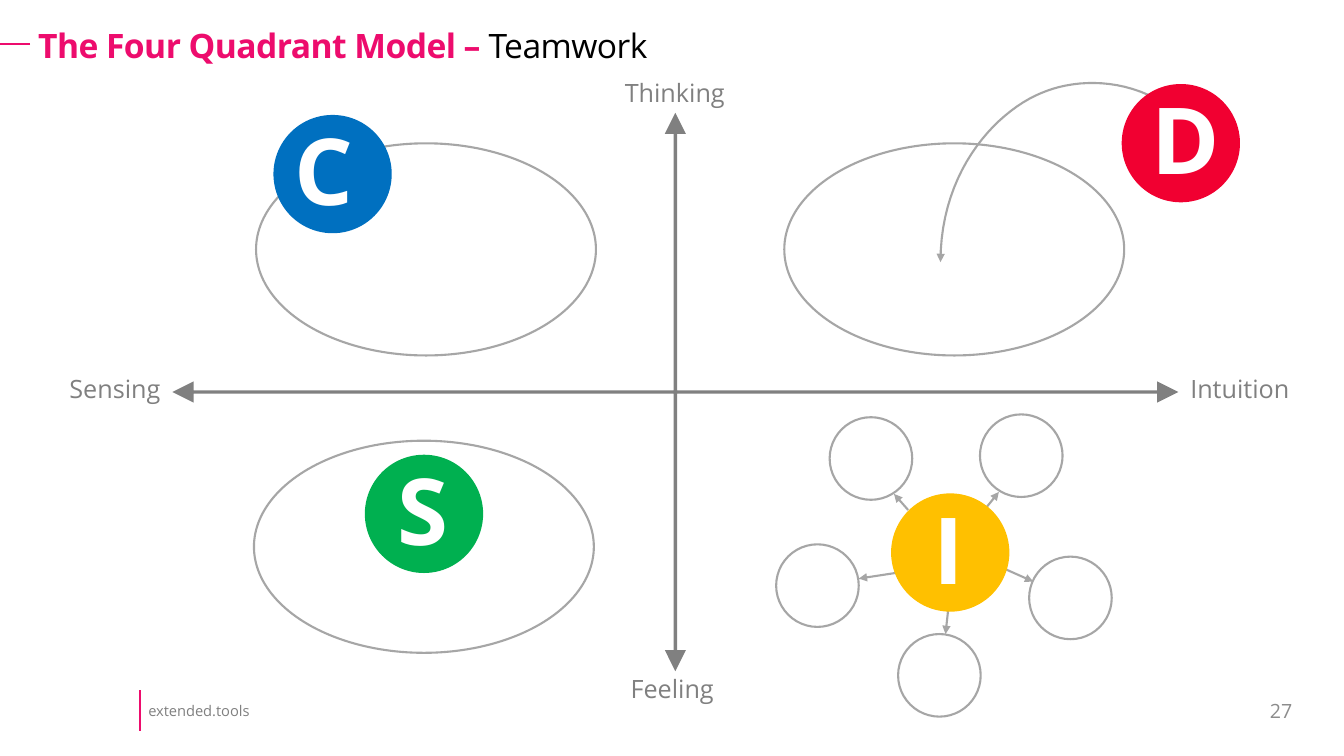
from dataclasses import dataclass
from lxml.etree import SubElement
from pptx import Presentation
from pptx.dml.color import RGBColor
from pptx.enum.shapes import MSO_CONNECTOR, MSO_SHAPE
from pptx.enum.text import MSO_ANCHOR, MSO_AUTO_SIZE, PP_ALIGN
from pptx.oxml.ns import qn
from pptx.util import Pt


@dataclass(frozen=True)
class Theme:
    font: str = "Open Sans"
    accent: str = "ED0C6D"
    black: str = "000000"
    white: str = "FFFFFF"
    axis: str = "808080"
    outline: str = "A6A6A6"
    number: str = "8C8C8C"
    red: str = "F10031"
    green: str = "00B050"
    yellow: str = "FFC000"
    blue: str = "0070C0"
    title_size: float = 24
    label_size: float = 18
    letter_size: float = 66
    number_size: float = 14
    footer_size: float = 10.5
    line_width: float = 1.5


class SlideBuilder:
    def __init__(self, s, theme):
        self.s, self.t = s, theme

    def set_attrs(self, obj, values):
        for name, value in values.items():
            setattr(obj, name, value)

    def run(self, p, text, size, color, bold=False):
        r = p.add_run()
        r.text = text
        self.set_attrs(r.font, {"name": self.t.font, "size": Pt(size), "bold": bold})
        r.font.color.rgb = RGBColor.from_string(color)
        return r

    def frame(self, tf, inset_x, inset_y, anchor, wrap):
        self.set_attrs(tf, {
            "margin_left": Pt(inset_x), "margin_right": Pt(inset_x),
            "margin_top": Pt(inset_y), "margin_bottom": Pt(inset_y),
            "vertical_anchor": anchor, "word_wrap": wrap,
            "auto_size": MSO_AUTO_SIZE.NONE})

    def title(self, box, strong, plain):
        sp = self.s.shapes.title
        self.set_attrs(sp, dict(zip(("left", "top", "width", "height"), map(Pt, box))))
        self.frame(sp.text_frame, 5.7, 2.9, MSO_ANCHOR.MIDDLE, True)
        p = sp.text_frame.paragraphs[0]
        self.set_attrs(p, {"alignment": PP_ALIGN.LEFT, "line_spacing": 0.9})
        for text, color, bold in ((strong, self.t.accent, True), (plain, self.t.black, False)):
            r = self.run(p, text, self.t.title_size, color, bold)
            r.font._element.set("spc", "-40")

    def text(self, box, text, size, color, align=PP_ALIGN.LEFT, inset=(7.2, 3.6),
             anchor=MSO_ANCHOR.TOP, wrap=True, bold=False):
        tf = self.s.shapes.add_textbox(*map(Pt, box)).text_frame
        self.frame(tf, *inset, anchor, wrap)
        p = tf.paragraphs[0]
        p.alignment = align
        self.run(p, text, size, color, bold)

    def stroke(self, sp, color, arrow=None):
        sp.line.color.rgb = RGBColor.from_string(color)
        sp.line.width = Pt(self.t.line_width)
        if arrow:
            SubElement(sp.line._get_or_add_ln(), qn(f"a:{arrow}"), type="triangle")

    def line(self, start, end, color, arrow=None):
        sp = self.s.shapes.add_connector(MSO_CONNECTOR.STRAIGHT, *map(Pt, (*start, *end)))
        self.stroke(sp, color, arrow)
        SubElement(sp._element.spPr, qn("a:effectLst"))

    def shape(self, kind, box, fill=None, adjustments=()):
        sp = self.s.shapes.add_shape(kind, *map(Pt, box))
        sp.shadow.inherit = False
        for i, value in enumerate(adjustments):
            sp.adjustments[i] = value
        if fill:
            sp.fill.solid()
            sp.fill.fore_color.rgb = RGBColor.from_string(fill)
            sp.line.fill.background()
        else:
            sp.fill.background()
            self.stroke(sp, self.t.outline)

    def curve(self, points, steps=24):
        """Draw joined cubic curves; each takes three points after the first."""
        dots = []
        for i in range(0, len(points) - 1, 3):
            for k in range(1, steps + 1):
                u = k / steps
                weights = ((1 - u) ** 3, 3 * u * (1 - u) ** 2, 3 * u * u * (1 - u), u ** 3)
                dots.append(tuple(
                    Pt(sum(w * pt[axis] for w, pt in zip(weights, points[i:i + 4])))
                    for axis in (0, 1)))
        fb = self.s.shapes.build_freeform(*map(Pt, points[0]))
        fb.add_line_segments(dots, close=False)
        sp = fb.convert_to_shape()
        sp.shadow.inherit = False
        sp.fill.background()
        self.stroke(sp, self.t.outline, "headEnd")

    def badge(self, letter, left, top, text_dx, color):
        self.shape(MSO_SHAPE.OVAL, (left, top, 84.5, 84.5), color)
        self.text((left + text_dx, top - 1, 58.3, 87), letter, self.t.letter_size,
                  self.t.white, PP_ALIGN.CENTER, (0, 0), bold=True)


def main():
    prs = Presentation()
    prs.slide_width, prs.slide_height = Pt(960), Pt(540)
    t = Theme()
    b = SlideBuilder(prs.slides.add_slide(prs.slide_layouts[5]), t)

    # Footer and title
    b.text((96.5, 496.1, 123.8, 23), "extended.tools", t.footer_size, t.axis,
           inset=(9.4, 5), anchor=MSO_ANCHOR.MIDDLE)
    b.line((100.1, 493.2), (100.1, 522), t.accent)
    b.line((21.6, 31.7), (0, 31.7), t.accent)
    b.title((21.6, 18, 909.4, 32.4), "The Four Quadrant Model – ", "Teamwork")

    # Arrows from I to its satellites, and from D into its team
    for start, end in (((678.2, 427), (675.4, 452.9)), ((710.6, 403.2), (738, 415.4)),
                       ((701.3, 366.5), (713.5, 351.4)), ((648.7, 364.3), (638.6, 352.8)),
                       ((641.5, 409), (613.4, 413.3))):
        b.line(start, end, t.outline, "tailEnd")
    b.curve([(671.8, 187.2), (671.8, 118.8), (715, 76.3), (748.1, 64.8),
             (781.2, 52.6), (837.4, 56.9), (870.5, 115.9)])

    # Axes and their labels
    b.shape(MSO_SHAPE.QUAD_ARROW, (123.1, 80.6, 718.6, 398.9), t.axis, (0.006, 0.019, 0.038))
    for text, box, align in (("Intuition", (843.1, 262.8, 85.7, 29), PP_ALIGN.LEFT),
                             ("Sensing", (41.8, 262.8, 79.9, 29), PP_ALIGN.RIGHT),
                             ("Feeling", (442.8, 477.4, 74.2, 29), PP_ALIGN.RIGHT),
                             ("Thinking", (439.2, 51.8, 86.4, 29), PP_ALIGN.LEFT)):
        b.text(box, text, t.label_size, t.axis, align, wrap=False)

    # Teams
    for left, top in ((182.9, 102.4), (560.2, 102.4), (181.4, 314.8)):
        b.shape(MSO_SHAPE.OVAL, (left, top, 242.8, 151.5))

    # Letter badges
    for badge in (("D", 801.2, 60, 16.7, t.red), ("S", 260.6, 324.8, 12.2, t.green),
                  ("I", 636.5, 352.4, 12.2, t.yellow), ("C", 195.3, 82.1, 7.2, t.blue)):
        b.badge(*badge)

    # Satellites around I
    for left, top in ((592.6, 298), (554.4, 388.8), (641.5, 452.9),
                      (735.1, 397.6), (700, 296)):
        b.shape(MSO_SHAPE.OVAL, (left, top, 59, 59))

    # Page number
    b.text((839.5, 493.2, 90.7, 28.8), "27", t.number_size, t.number,
           PP_ALIGN.RIGHT, anchor=MSO_ANCHOR.MIDDLE)

    prs.save("out.pptx")


if __name__ == "__main__":
    main()
